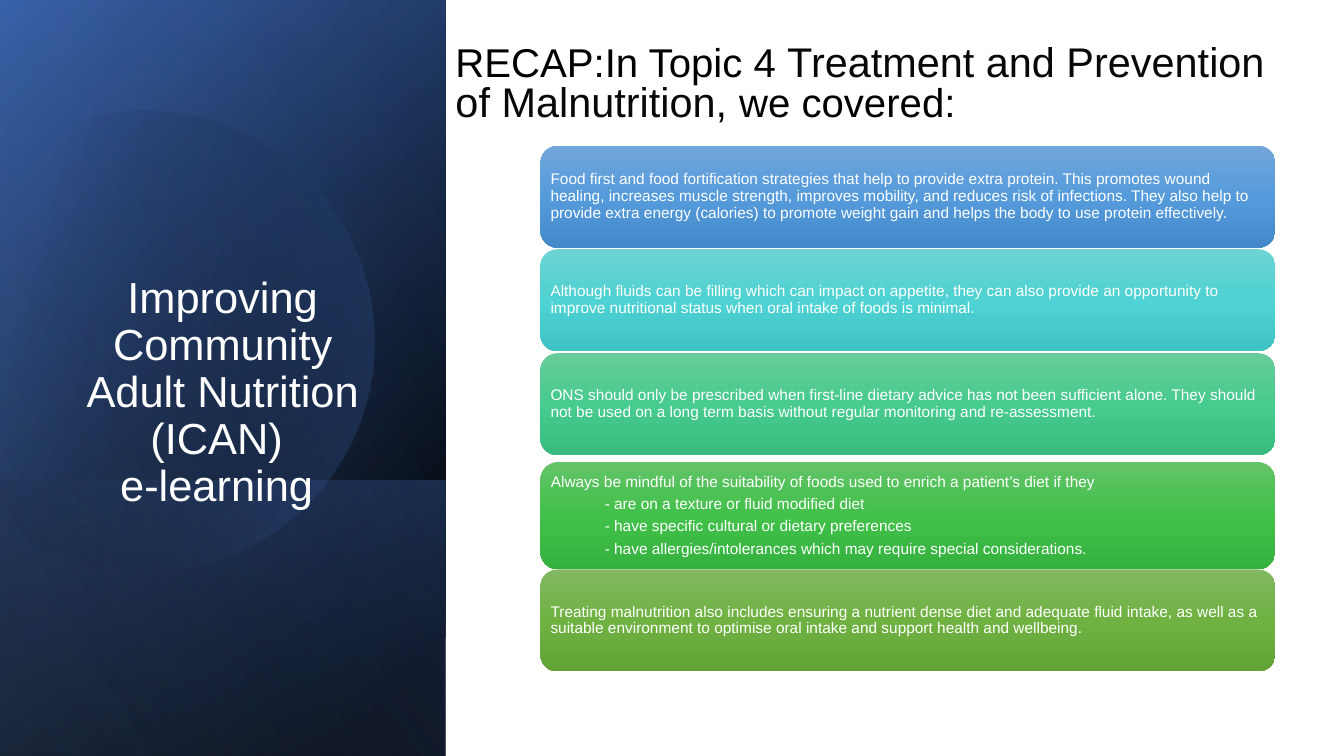
import math

from pptx import Presentation
from pptx import oxml
from pptx import util as u
from pptx.dml.color import RGBColor
from pptx.enum import shapes, text
from pptx.oxml.ns import nsdecls, qn

WHITE, BLACK, INK = "FFFFFF", "000000", "080808"
NAVY, BLUE, PALE = "2F5597", "4472C4", "8FAADC"


def colour(value):
    return RGBColor.from_string(value)


class SlideBuilder:
    font = "Arial"

    def __init__(self, page):
        self.page = page

    def gradient(self, shape, stops, angle):
        """Stops are (position %, colour, opacity %)."""
        marks = "".join(
            f'<a:gs pos="{pos * 1000}"><a:srgbClr val="{value}">'
            f'<a:alpha val="{opacity * 1000}"/></a:srgbClr></a:gs>'
            for pos, value, opacity in stops)
        fill = oxml.parse_xml(
            f'<a:gradFill {nsdecls("a")} rotWithShape="1"><a:gsLst>{marks}</a:gsLst>'
            f'<a:lin ang="{angle * 60000}" scaled="0"/></a:gradFill>')
        shape.shadow.inherit = False
        shape.line.fill.background()
        shape.fill.background()
        properties = shape._element.spPr
        properties.replace(properties.find(qn("a:noFill")), fill)

    def shape(self, kind, area, stops, angle):
        shape = self.page.shapes.add_shape(kind, *map(u.Cm, area))
        self.gradient(shape, stops, angle)
        return shape

    def turned_panel(self, area, stops, angle):
        panel = self.shape(shapes.MSO_SHAPE.RECTANGLE, area, stops, angle)
        panel.rotation = 90
        panel._element.spPr.find(qn("a:xfrm")).set("flipH", "1")

    def curved_outline(self, area, turn, steps, stops, angle):
        """Steps hold slide points in cm; one point is a line, three a curve."""
        left, top, width, height = area
        cos, sin = math.cos(math.radians(turn)), math.sin(math.radians(turn))

        def local(point):
            x, y = point[0] - left - width / 2, point[1] - top - height / 2
            across = x * cos + y * sin + width / 2
            down = y * cos - x * sin + height / 2
            return f'<a:pt x="{round(across * 100)}" y="{round(down * 100)}"/>'

        builder = self.page.shapes.build_freeform(
            round(left * 100), round(top * 100), scale=u.Cm(1) / 100)
        right, bottom = round((left + width) * 100), round((top + height) * 100)
        builder.add_line_segments([(right, round(top * 100)), (right, bottom),
                                   (round(left * 100), bottom)], close=True)
        disc = builder.convert_to_shape()
        route = disc._element.spPr.find(".//" + qn("a:path"))
        for part in list(route):
            route.remove(part)
        for number, step in enumerate(steps):
            tag = "cubicBezTo" if len(step) == 3 else "lnTo" if number else "moveTo"
            points = "".join(map(local, step))
            route.append(oxml.parse_xml(f'<a:{tag} {nsdecls("a")}>{points}</a:{tag}>'))
        route.append(oxml.parse_xml(f'<a:close {nsdecls("a")}/>'))
        disc.rotation = turn
        self.gradient(disc, stops, angle)

    def frame(self, box, anchor, inset=None):
        frame = box.text_frame
        frame.word_wrap = True
        frame.auto_size = text.MSO_AUTO_SIZE.NONE
        frame.vertical_anchor = anchor
        if inset is not None:
            frame.margin_left = frame.margin_right = u.Cm(inset)
            frame.margin_top = frame.margin_bottom = u.Cm(inset)
        return frame

    def style(self, para, spacing, align=text.PP_ALIGN.LEFT, after=0, indent=0):
        para.alignment = align
        para.line_spacing = spacing
        para.space_before, para.space_after = u.Pt(0), u.Pt(after)
        if indent:
            para._p.get_or_add_pPr().set("marL", str(u.Cm(indent)))

    def span(self, para, words, size, value):
        span = para.add_run()
        span.text = words
        span.font.name = self.font
        span.font.size = u.Pt(size)
        span.font.color.rgb = colour(value)

    def title(self, area, lines):
        title = self.page.shapes.title
        title.left, title.top, title.width, title.height = map(u.Cm, area)
        self.page.shapes._spTree.append(title._element)  # in front of the panels
        para = self.frame(title, text.MSO_ANCHOR.BOTTOM).paragraphs[0]
        self.style(para, 0.9, text.PP_ALIGN.CENTER)
        for number, line in enumerate(lines):
            if number:
                para.add_line_break()
            self.span(para, line, 31, WHITE)

    def heading(self, area, spans):
        box = self.page.shapes.add_textbox(*map(u.Cm, area))
        para = self.frame(box, text.MSO_ANCHOR.BOTTOM).paragraphs[0]
        self.style(para, 0.8)
        for words, size, value in spans:
            self.span(para, words, size, value)

    def card(self, top, height, shades, lines):
        stops = [(pos, shade, 100) for pos, shade in zip((0, 50, 100), shades)]
        box = self.shape(shapes.MSO_SHAPE.ROUNDED_RECTANGLE,
                         (13.62, top, 18.52, height), stops, 90)
        frame = self.frame(box, text.MSO_ANCHOR.MIDDLE, 0.13)
        for number, line in enumerate(lines):
            para = frame.add_paragraph() if number else frame.paragraphs[0]
            self.style(para, 0.9, after=4, indent=1.36 if number else 0)
            self.span(para, line, 11, WHITE)


DISC_STEPS = [
    [(3.78, 2.79)],
    [(6.25, 2.84), (8.51, 4.5), (9.22, 6.99)],
    [(10.11, 10.08), (8.33, 13.28), (5.26, 14.17)],
    [(3.33, 14.73), (1.35, 14.25), (-0.08, 13.06)],
    [(-0.38, 12.78)],
    [(-0.38, 4.45)],
    [(0, 4.09)],
    [(0.58, 3.61), (1.27, 3.25), (2.03, 3.02)],
    [(2.62, 2.87), (3.2, 2.79), (3.78, 2.79)],
]

# Top, height, gradient shades and lines of each card
CARDS = [
    (3.67, 2.57, ("71A6DB", "559BDB", "448ACA"), [
        "Food first and food fortification strategies that help to provide extra "
        "protein. This promotes wound healing, increases muscle strength, improves "
        "mobility, and reduces risk of infections. They also help to provide extra "
        "energy (calories) to promote weight gain and helps the body to use protein "
        "effectively."]),
    (6.28, 2.57, ("6CD3D3", "4ED2D3", "3EC2C3"), [
        "Although fluids can be filling which can impact on appetite, they can also "
        "provide an opportunity to improve nutritional status when oral intake of "
        "foods is minimal."]),
    (8.9, 2.57, ("67CC9A", "47CB8E", "39BB7F"), [
        "ONS should only be prescribed when first-line dietary advice has not been "
        "sufficient alone. They should not be used on a long term basis without "
        "regular monitoring and re-assessment."]),
    (11.64, 2.71, ("63C368", "42C14A", "34B23D"), [
        "Always be mindful of the suitability of foods used to enrich a patient’s "
        "diet if they",
        "- are on a texture or fluid modified diet",
        "- have specific cultural or dietary preferences",
        "- have allergies/intolerances which may require special considerations."]),
    (14.35, 2.57, ("81B861", "6FB242", "62A336"), [
        "Treating malnutrition also includes ensuring a nutrient dense diet and "
        "adequate fluid intake, as well as a suitable environment to optimise oral "
        "intake and support health and wellbeing."]),
]


def main():
    deck = Presentation()
    deck.slide_width, deck.slide_height = u.Cm(33.87), u.Cm(19.05)
    slide = SlideBuilder(deck.slides.add_slide(deck.slide_layouts[5]))

    # Side panel: layered gradients and a disc
    side = (-3.91, 3.91, 19.05, 11.23)
    slide.turned_panel(side, [(8, BLACK, 100), (100, NAVY, 100)], 50)
    slide.turned_panel(side, [(0, BLACK, 0), (99, BLUE, 46)], 30)
    slide.turned_panel((2.13, 9.97, 6.95, 11.23), [(2, BLUE, 29), (100, BLACK, 30)], 130)
    slide.curved_outline((-1.4, 2.69, 10.85, 11.61), 343.9, DISC_STEPS,
                         [(29, BLACK, 0), (100, BLUE, 43)], 30)
    slide.turned_panel(side, [(0, BLACK, 0), (99, PALE, 11)], 120)

    # Course title
    slide.title((1.28, 6.34, 8.66, 6.65),
                ["Improving Community Adult Nutrition (ICAN) ", "e-learning "])

    # Recap cards
    for card in CARDS:
        slide.card(*card)

    # Recap heading
    slide.heading((11.23, 0.87, 20.93, 2.41), [
        ("RECAP:In Topic 4 ", 28.7, BLACK),
        ("Treatment and Prevention of Malnutrition, ", 29.6, INK),
        ("we covered:", 28.7, BLACK)])

    deck.save("out.pptx")


if __name__ == "__main__":
    main()
